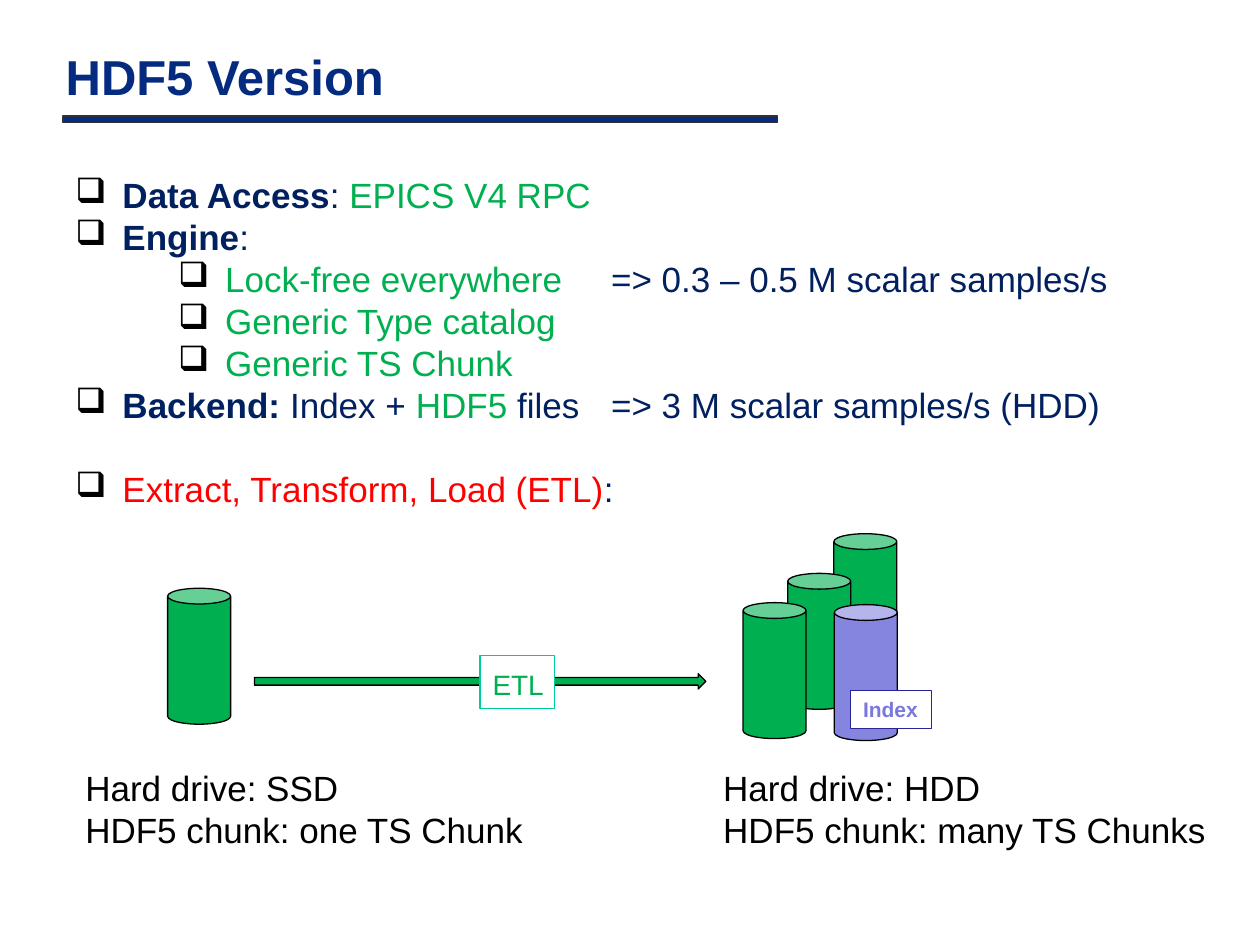
"""Build the HDF5 version slide with its feature list and ETL diagram."""
from dataclasses import dataclass
from typing import Optional

import lxml.etree
import pptx
import pptx.dml.color
import pptx.enum.shapes
import pptx.enum.text
import pptx.oxml.ns
import pptx.util

Cm = pptx.util.Cm
Pt = pptx.util.Pt
RGBColor = pptx.dml.color.RGBColor
Preset = pptx.enum.shapes.MSO_SHAPE
Anchor = pptx.enum.text.MSO_ANCHOR
AutoSize = pptx.enum.text.MSO_AUTO_SIZE
Align = pptx.enum.text.PP_ALIGN

BLACK = RGBColor(0x00, 0x00, 0x00)
WHITE = RGBColor(0xFF, 0xFF, 0xFF)
TITLE_BLUE = RGBColor(0x04, 0x2B, 0x7F)
NAVY = RGBColor(0x00, 0x20, 0x60)
GREEN = RGBColor(0x00, 0xB0, 0x50)
RED = RGBColor(0xFF, 0x00, 0x00)
LILAC = RGBColor(0x85, 0x85, 0xE0)
INDEX_TEXT = RGBColor(0x78, 0x78, 0xDE)
INDEX_EDGE = RGBColor(0x26, 0x26, 0x99)
TEAL = RGBColor(0x00, 0xCC, 0x99)
RULE_EDGE = RGBColor(0x32, 0x2F, 0x31)

HANGING = 0.95
LEVEL_INDENTS = (0.95, 3.02)
RESULT_TAB = 10.8
CAN_SIZE = (1.27, 2.74)


@dataclass(frozen=True)
class Phrase:
    text: str
    color: RGBColor = NAVY
    bold: bool = False
    size: float = 20


@dataclass(frozen=True)
class Item:
    phrases: tuple[Phrase, ...]
    level: int = 0
    gap: Optional[float] = None


@dataclass(frozen=True)
class Block:
    preset: Preset
    place: tuple[float, float, float, float]
    fill: RGBColor
    edge: RGBColor = BLACK


FEATURES = (
    Item((Phrase("Data Access", bold=True), Phrase(": "), Phrase("EPICS V4 RPC", GREEN))),
    Item((Phrase("Engine", bold=True), Phrase(":"))),
    Item((Phrase("Lock-free everywhere", GREEN),
          Phrase("\t=> 0.3 – 0.5 M scalar samples/s")), level=1),
    Item((Phrase("Generic Type catalog", GREEN),), level=1),
    Item((Phrase("Generic TS Chunk", GREEN),), level=1),
    Item((Phrase("Backend: ", bold=True), Phrase("Index + "), Phrase("HDF5", GREEN),
          Phrase(" files\t=> 3 M scalar samples/s (HDD)"))),
    Item((Phrase("Extract, Transform, Load (ETL)", RED), Phrase(":")), gap=24),
)
CAPTIONS = (
    ((1.47, 15.32, 9.4, 1.96), ("Hard drive: SSD", "HDF5 chunk: one TS Chunk")),
    ((14.33, 15.32, 10.31, 1.96), ("Hard drive: HDD", "HDF5 chunk: many TS Chunks")),
)
STORE_CANS = (
    (16.81, 10.76, GREEN),
    (15.88, 11.56, GREEN),
    (14.98, 12.15, GREEN),
    (16.82, 12.19, LILAC),
)


def add_phrase(paragraph, phrase: Phrase) -> None:
    run = paragraph.add_run()
    run.text = phrase.text
    run.font.color.rgb = phrase.color
    font_format = {"name": "Arial", "size": Pt(phrase.size), "bold": phrase.bold}
    for attribute, value in font_format.items():
        setattr(run.font, attribute, value)


def add_child(parent, tag: str, **attributes: str):
    return lxml.etree.SubElement(parent, pptx.oxml.ns.qn(tag), attributes)


def set_bullet(paragraph, item: Item) -> None:
    indent = LEVEL_INDENTS[item.level]
    paragraph.level = item.level
    properties = paragraph._p.get_or_add_pPr()
    properties.set("marL", str(Cm(indent)))
    properties.set("indent", str(-Cm(HANGING)))
    add_child(add_child(properties, "a:buClr"), "a:srgbClr", val=str(BLACK))
    add_child(properties, "a:buChar", char="❑")
    if any("\t" in phrase.text for phrase in item.phrases):
        tabs = add_child(properties, "a:tabLst")
        for stop in (RESULT_TAB - indent, RESULT_TAB):
            add_child(tabs, "a:tab", pos=str(Cm(stop)), algn="l")
    if item.gap is not None:
        paragraph.space_before = Pt(item.gap)


def fill_text(frame, items: tuple[Item, ...], bulleted: bool = False) -> None:
    frame_format = {
        "word_wrap": bulleted,
        "auto_size": AutoSize.SHAPE_TO_FIT_TEXT,
        "vertical_anchor": Anchor.TOP,
    }
    for attribute, value in frame_format.items():
        setattr(frame, attribute, value)
    for number, item in enumerate(items):
        paragraph = frame.add_paragraph() if number else frame.paragraphs[0]
        paragraph.alignment = Align.LEFT
        if bulleted:
            set_bullet(paragraph, item)
        for phrase in item.phrases:
            add_phrase(paragraph, phrase)


def add_block(shapes, block: Block):
    shape = shapes.add_shape(block.preset, *map(Cm, block.place))
    shape.shadow.inherit = False
    shape.fill.solid()
    shape.fill.fore_color.rgb = block.fill
    shape.line.color.rgb = block.edge
    shape.line.width = Pt(0.75)
    return shape


def add_can(shapes, left: float, top: float, fill: RGBColor) -> None:
    add_block(shapes, Block(Preset.CAN, (left, top, *CAN_SIZE), fill))


def add_title(slide, text: str) -> None:
    title = slide.shapes.title
    placement = dict(zip(("left", "top", "width", "height"),
                         map(Cm, (1.07, 0.84, 23.27, 1.6))))
    for attribute, value in placement.items():
        setattr(title, attribute, value)
    title.text_frame.vertical_anchor = Anchor.MIDDLE
    title.text_frame.auto_size = AutoSize.NONE
    paragraph = title.text_frame.paragraphs[0]
    paragraph.alignment = Align.LEFT
    paragraph.line_spacing = 0.8
    add_phrase(paragraph, Phrase(text, TITLE_BLUE, True, 28))


def main() -> None:
    deck = pptx.Presentation()
    deck.slide_width, deck.slide_height = Cm(25.4), Cm(19.05)
    slide = deck.slides.add_slide(deck.slide_layouts[5])
    shapes = slide.shapes
    add_title(slide, "HDF5 Version")

    features = shapes.add_textbox(*map(Cm, (1.27, 3.38, 22.43, 7.09)))
    fill_text(features.text_frame, FEATURES, bulleted=True)

    store = shapes.add_group_shape().shapes
    for left, top, fill in STORE_CANS:
        add_can(store, left, top, fill)
    index = add_block(store, Block(Preset.RECTANGLE, (17.15, 13.92, 1.63, 0.77),
                                   WHITE, INDEX_EDGE))
    fill_text(index.text_frame, (Item((Phrase("Index", INDEX_TEXT, True, 12),)),))

    add_can(shapes, 3.38, 11.86, GREEN)
    add_block(shapes, Block(Preset.RIGHT_ARROW, (5.13, 13.58, 9.1, 0.31), GREEN))

    for place, lines in CAPTIONS:
        caption = shapes.add_textbox(*map(Cm, place))
        fill_text(caption.text_frame,
                  tuple(Item((Phrase(line, BLACK),)) for line in lines))

    etl = shapes.add_group_shape().shapes
    add_block(etl, Block(Preset.RECTANGLE, (9.68, 13.21, 1.5, 1.07), WHITE, TEAL))
    etl_label = etl.add_textbox(*map(Cm, (9.68, 13.34, 1.75, 0.94)))
    fill_text(etl_label.text_frame, (Item((Phrase("ETL", GREEN, size=16),)),))

    add_block(shapes, Block(Preset.RECTANGLE, (1.27, 2.34, 14.4, 0.13),
                            TITLE_BLUE, RULE_EDGE))
    deck.save("out.pptx")


if __name__ == "__main__":
    main()
